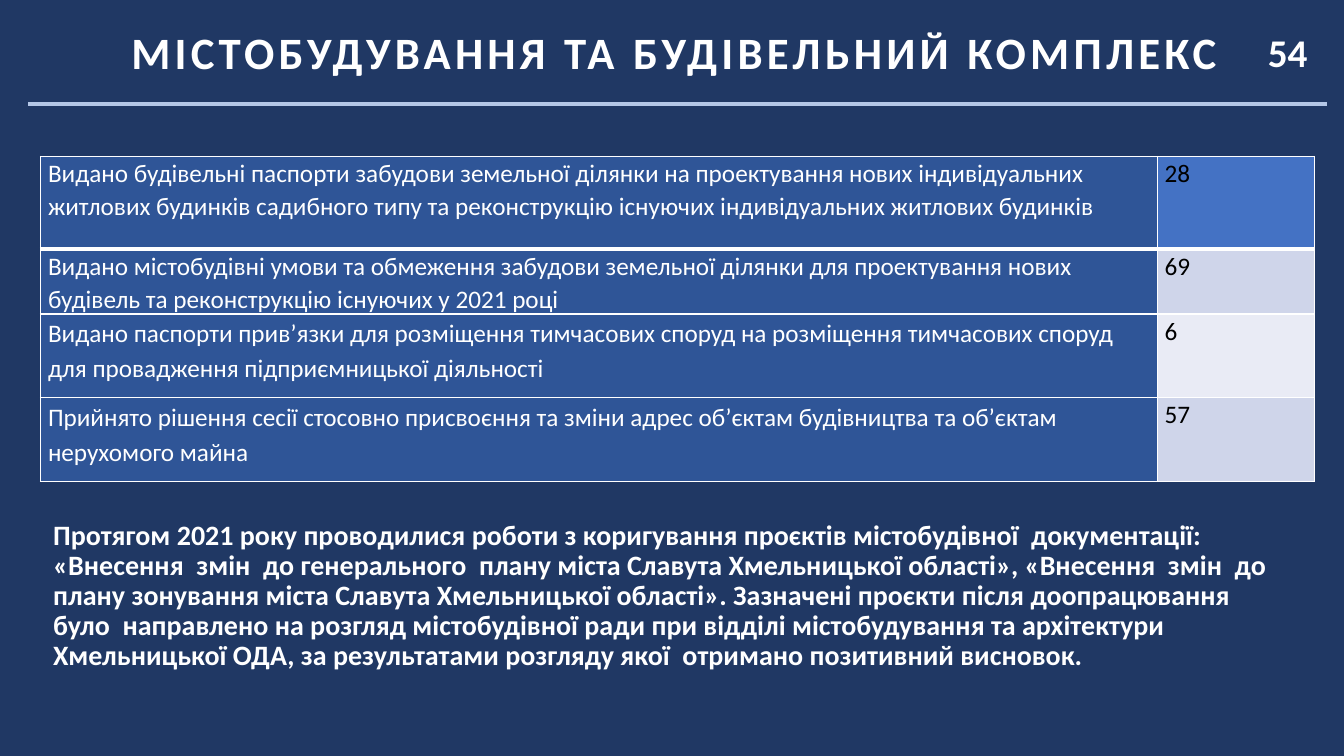
from lxml.etree import SubElement
from pptx import Presentation
from pptx.dml.color import RGBColor
from pptx.enum.shapes import MSO_CONNECTOR as Connector
from pptx.enum.text import PP_ALIGN as Align
from pptx.oxml import parse_xml
from pptx.oxml.ns import nsdecls, qn
from pptx.util import Cm, Pt

NAVY = RGBColor(0x20, 0x38, 0x64)
WHITE = RGBColor(0xFF, 0xFF, 0xFF)
BLACK = RGBColor(0x00, 0x00, 0x00)
RULE = RGBColor(0xB4, 0xC7, 0xE7)
LABEL = RGBColor(0x2F, 0x55, 0x97)
HEADER = RGBColor(0x44, 0x72, 0xC4)
BAND_DARK = RGBColor(0xCF, 0xD5, 0xEA)
BAND_LIGHT = RGBColor(0xE9, 0xEB, 0xF5)
FONT = "Calibri"

ROWS = [
    ("Видано будівельні паспорти забудови земельної ділянки на проектування нових "
     "індивідуальних житлових будинків садибного типу та реконструкцію існуючих "
     "індивідуальних житлових будинків", "28", HEADER, 2.34, 1.07, 8),
    ("Видано містобудівні умови та обмеження забудови земельної ділянки для проектування "
     "нових будівель та реконструкцію існуючих у 2021 році", "69", BAND_DARK, 1.32, 1.07, 8),
    ("Видано паспорти прив’язки для розміщення тимчасових споруд на розміщення тимчасових "
     "споруд для провадження підприємницької діяльності", "6", BAND_LIGHT, 2.11, 1.15, 10),
    ("Прийнято рішення сесії стосовно присвоєння та зміни адрес об’єктам будівництва та "
     "об’єктам нерухомого майна", "57", BAND_DARK, 2.11, 1.15, 10),
]
SUMMARY = (
    "Протягом 2021 року проводилися роботи з коригування проєктів містобудівної  "
    "документації:  «Внесення  змін  до генерального  плану міста Славута Хмельницької "
    "області», «Внесення  змін  до плану зонування міста Славута Хмельницької області». "
    "Зазначені проєкти після доопрацювання було  направлено на розгляд містобудівної ради "
    "при відділі містобудування та архітектури Хмельницької ОДА, за результатами розгляду "
    "якої  отримано позитивний висновок.")


def add_run(p, text, size, color=WHITE, bold=False):
    """Append a styled run to a paragraph."""
    r = p.add_run()
    r.text = text
    r.font.name, r.font.size, r.font.bold = FONT, Pt(size), bold
    r.font.color.rgb = color
    return r


def add_text(s, box, text, size, align=Align.LEFT, spacing=1.0):
    """Add a bold white text box and return its run."""
    tf = s.shapes.add_textbox(*map(Cm, box)).text_frame
    tf.word_wrap = True
    p = tf.paragraphs[0]
    p.alignment, p.line_spacing = align, spacing
    return add_run(p, text, size, bold=True)


def style_title(r):
    """Give the title run wide letter spacing and a soft shadow."""
    rPr = r.font._element
    rPr.set("spc", "300")
    rPr.find(qn("a:solidFill")).addnext(parse_xml(
        f'<a:effectLst {nsdecls("a")}><a:outerShdw blurRad="38100" dist="38100" '
        'dir="2700000"><a:srgbClr val="000000"><a:alpha val="43000"/></a:srgbClr>'
        '</a:outerShdw></a:effectLst>'))


def add_rule(s, x1, x2, y):
    """Draw the horizontal rule under the title."""
    line = s.shapes.add_connector(Connector.STRAIGHT, Cm(x1), Cm(y), Cm(x2), Cm(y))
    line.line.color.rgb, line.line.width = RULE, Pt(3)
    SubElement(line._element.spPr, qn("a:effectLst"))


def set_borders(cell, top, bottom):
    """Draw white cell borders with the given top and bottom widths."""
    tcPr = cell._tc.get_or_add_tcPr()
    for side, width in zip("LRTB", (1, 1, top, bottom)):
        tcPr.append(parse_xml(
            f'<a:ln{side} {nsdecls("a")} w="{Pt(width)}"><a:solidFill>'
            f'<a:srgbClr val="{WHITE}"/></a:solidFill></a:ln{side}>'))


def fill_cell(cell, text, color, fill, spacing, after):
    """Write and colour one table cell."""
    cell.margin_left = cell.margin_right = Cm(0.19)
    cell.margin_top = cell.margin_bottom = 0
    cell.fill.solid()
    cell.fill.fore_color.rgb = fill
    p = cell.text_frame.paragraphs[0]
    p.line_spacing, p.space_after = spacing, Pt(after)
    add_run(p, text, 18, color)


def add_results(s, x, y, widths):
    """Add the table of issued documents."""
    height = sum(row[3] for row in ROWS)
    table = s.shapes.add_table(len(ROWS), len(widths), Cm(x), Cm(y),
                               Cm(sum(widths)), Cm(height)).table
    for column, width in zip(table.columns, widths):
        column.width = Cm(width)
    for i, (label, value, fill, row_height, spacing, after) in enumerate(ROWS):
        table.rows[i].height = Cm(row_height)
        for cell in table.rows[i].cells:
            set_borders(cell, 3 if i == 1 else 1, 3 if i == 0 else 1)
        fill_cell(table.cell(i, 0), label, WHITE, LABEL, spacing, after)
        fill_cell(table.cell(i, 1), value, BLACK, fill, 1.07, 8)


def main():
    """Build the slide and save it."""
    prs = Presentation()
    prs.slide_width, prs.slide_height = Cm(33.87), Cm(19.05)
    s = prs.slides.add_slide(prs.slide_layouts[6])
    s.background.fill.solid()
    s.background.fill.fore_color.rgb = NAVY
    style_title(add_text(s, (0.5, 0.5, 33, 1.63),
                         "МІСТОБУДУВАННЯ ТА БУДІВЕЛЬНИЙ КОМПЛЕКС", 32, Align.CENTER))
    add_rule(s, 0.71, 33.43, 2.62)
    add_text(s, (31.7, 0.58, 1.7, 1.45), "54", 28)
    add_text(s, (1.09, 13, 31.34, 4.6), SUMMARY, 20, spacing=0.9)
    add_results(s, 1.02, 3.94, (28.14, 3.96))
    prs.save("out.pptx")


if __name__ == "__main__":
    main()
